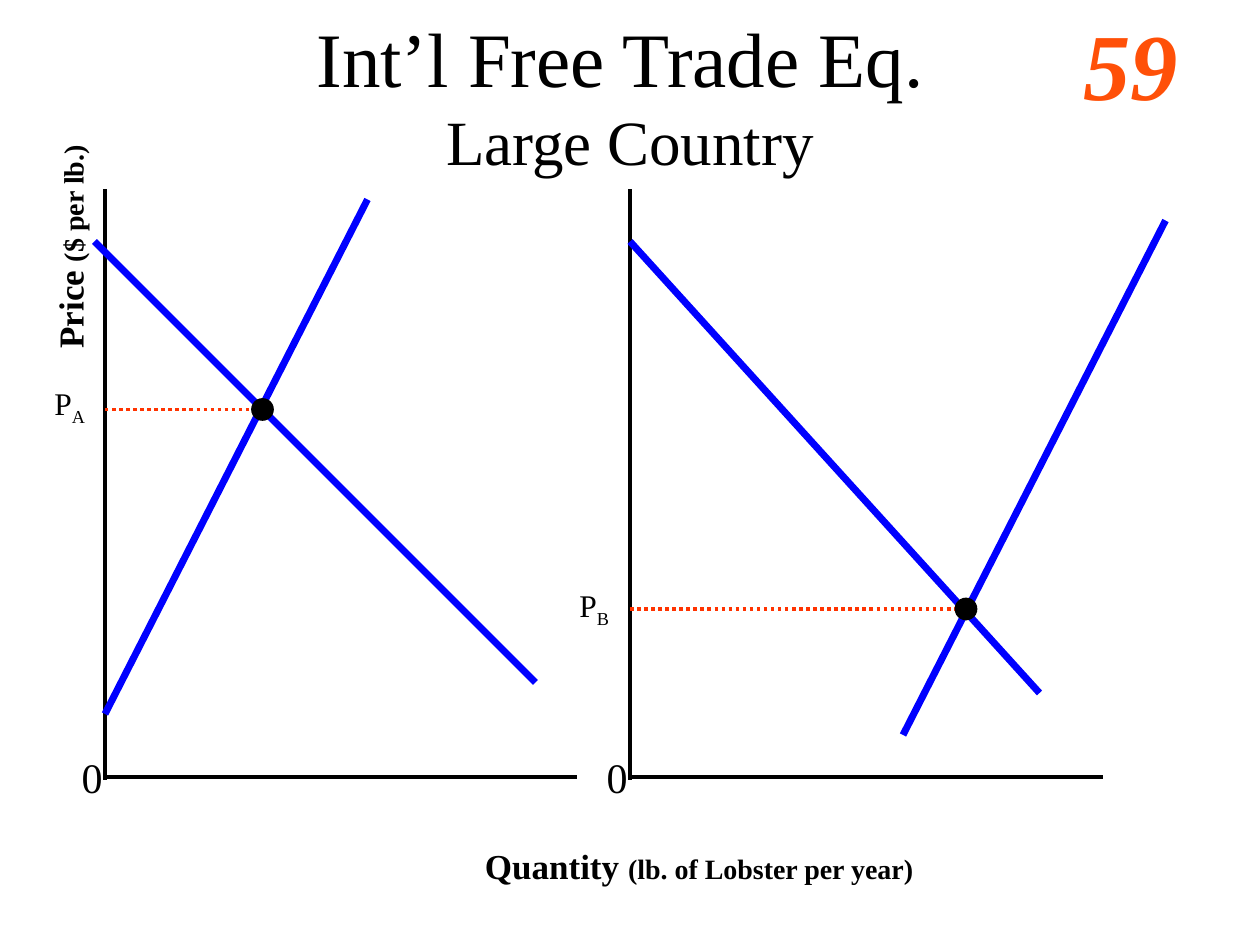
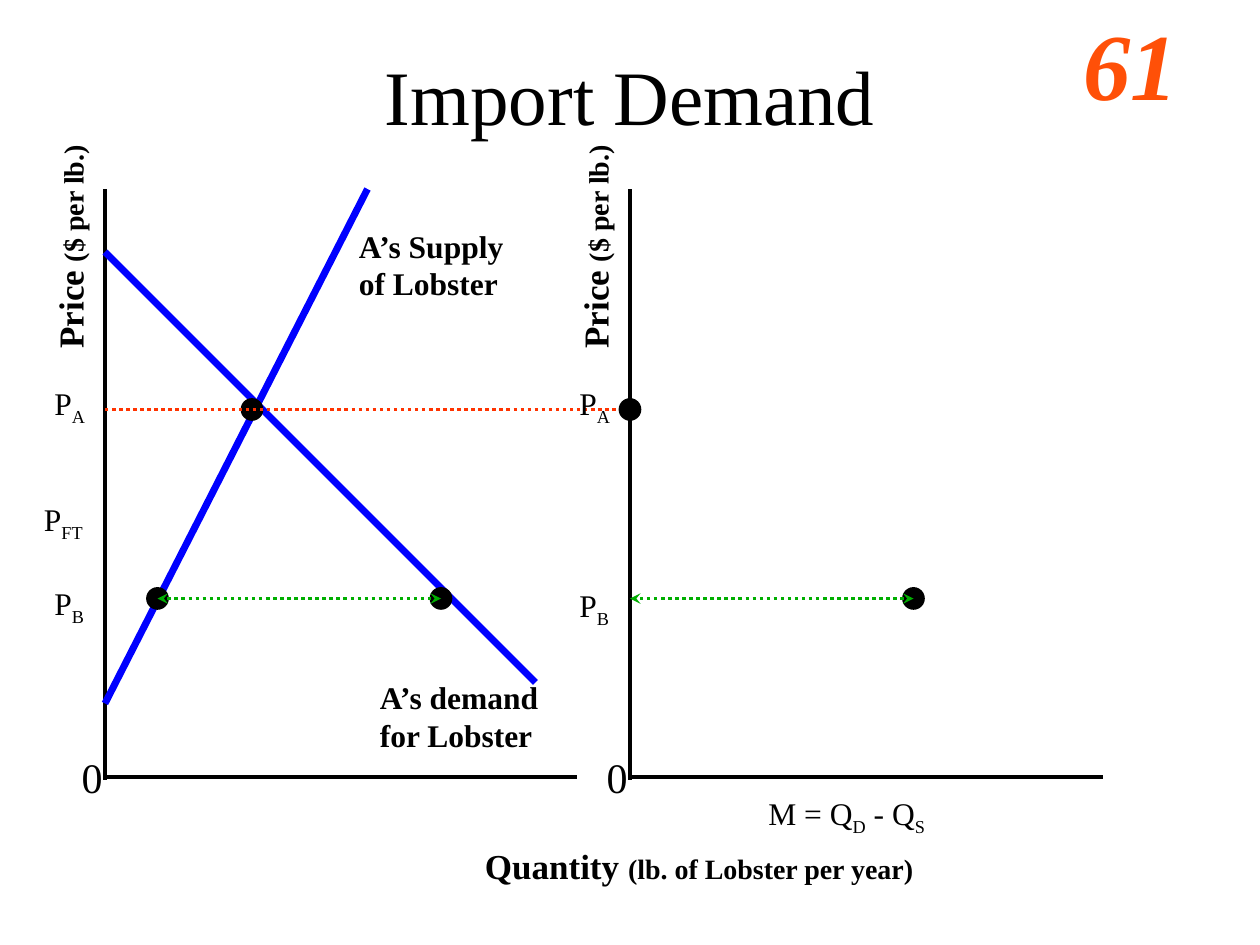
"""Build two lobster-trade slides on a grid of 120 columns and 90 rows."""
from dataclasses import dataclass
from typing import NamedTuple, Union

from lxml import etree
from pptx import Presentation
from pptx import util as u
from pptx.dml.color import RGBColor
from pptx.enum import dml, shapes, text
from pptx.oxml import ns

WIDTH, HEIGHT = u.Inches(10), u.Inches(7.5)
COLUMNS, ROWS = 120, 90
FONT = "Times New Roman"
COLOURS = {"ink": "000000", "curve": "0000FF", "price": "FF3300",
           "trade": "00AE00", "number": "FF5008"}
FORMATS = {
    "title": dict(size=u.Pt(44)),
    "subtitle": dict(size=u.Pt(36)),
    "number": dict(size=u.Pt(54), bold=True, italic=True),
    "axis": dict(size=u.Pt(20), bold=True),
    "unit": dict(size=u.Pt(16), bold=True),
    "zero": dict(size=u.Pt(24)),
    "curve": dict(size=u.Pt(18), bold=True),
    "symbol": dict(size=u.Pt(18)),
    "subscript": dict(size=u.Pt(18)),
}
FRAME = dict(margin_left=u.Inches(0.1), margin_right=u.Inches(0.1),
             margin_top=u.Inches(0.05), margin_bottom=u.Inches(0.05))
PANELS = LEFT, RIGHT = 10, 60
TOP, BASE, AXIS_LENGTH = 18, 74, 45
DOT = 2


class Run(NamedTuple):
    """Words in one format."""
    words: str
    style: str


class Box(NamedTuple):
    """A place on the grid."""
    column: float
    row: float
    columns: float
    rows: float


@dataclass(frozen=True)
class Label:
    """Paragraphs of runs in a box."""
    box: Box
    paragraphs: tuple[tuple[Run, ...], ...]
    wrap: bool = True
    turn: int = 0
    colour: str = "ink"


@dataclass(frozen=True)
class Line:
    """A straight line between two grid points."""
    start: tuple[float, float]
    end: tuple[float, float]
    colour: str = "curve"
    weight: float = 4
    dotted: bool = False
    arrows: bool = False


@dataclass(frozen=True)
class Dot:
    """A round mark centred on a grid point."""
    column: float
    row: float


Mark = Union[Label, Line, Dot]


@dataclass(frozen=True)
class Page:
    """The content of one slide."""
    number: str
    title: tuple[Run, ...]
    price_axes: tuple[int, ...]
    marks: tuple[Mark, ...]


def across(columns: float) -> int:
    """Turn columns into a length."""
    return round(WIDTH * columns / COLUMNS)


def down(rows: float) -> int:
    """Turn rows into a length."""
    return round(HEIGHT * rows / ROWS)


def place(box: Box) -> tuple[int, int, int, int]:
    """Turn a grid box into left, top, width and height."""
    return across(box.column), down(box.row), across(box.columns), down(box.rows)


def colour_of(name: str) -> RGBColor:
    """Look up a colour."""
    return RGBColor.from_string(COLOURS[name])


def assign(target, values: dict) -> None:
    """Set each named value on the target."""
    for name, value in values.items():
        setattr(target, name, value)


def write(paragraph, piece: Run, colour: str = "ink") -> None:
    """Add one formatted run to a paragraph."""
    run = paragraph.add_run()
    run.text = piece.words
    assign(run.font, dict(FORMATS[piece.style], name=FONT))
    run.font.color.rgb = colour_of(colour)
    if piece.style == "subscript":
        run._r.get_or_add_rPr().set("baseline", "-25000")


def draw_label(slide, label: Label) -> None:
    """Draw a text box."""
    area = slide.shapes.add_textbox(*place(label.box))
    area.rotation = label.turn
    frame = area.text_frame
    assign(frame, dict(FRAME, word_wrap=label.wrap,
                       auto_size=text.MSO_AUTO_SIZE.SHAPE_TO_FIT_TEXT))
    for index, pieces in enumerate(label.paragraphs):
        paragraph = frame.add_paragraph() if index else frame.paragraphs[0]
        for piece in pieces:
            write(paragraph, piece, label.colour)


def draw_line(parent, line: Line) -> None:
    """Draw a line on a slide or in a group."""
    (x1, y1), (x2, y2) = line.start, line.end
    stroke = parent.shapes.add_connector(
        shapes.MSO_CONNECTOR.STRAIGHT, across(x1), down(y1), across(x2), down(y2))
    stroke.line.color.rgb = colour_of(line.colour)
    stroke.line.width = u.Pt(line.weight)
    if line.dotted:
        stroke.line.dash_style = dml.MSO_LINE.ROUND_DOT
    if line.arrows:
        for end in ("a:headEnd", "a:tailEnd"):
            etree.SubElement(stroke.line._get_or_add_ln(), ns.qn(end), type="stealth")
    etree.SubElement(stroke._element.spPr, ns.qn("a:effectLst"))


def draw_dot(slide, dot: Dot) -> None:
    """Draw a filled round mark."""
    box = Box(dot.column - DOT / 2, dot.row - DOT / 2, DOT, DOT)
    point = slide.shapes.add_shape(shapes.MSO_SHAPE.OVAL, *place(box))
    point.shadow.inherit = False
    point.fill.solid()
    point.fill.fore_color.rgb = point.line.color.rgb = colour_of("ink")
    point.line.width = u.Pt(1)


DRAWERS = {Label: draw_label, Line: draw_line, Dot: draw_dot}


def guide(start: float, end: float, row: float) -> Line:
    """Describe a dotted price level."""
    return Line((start, row), (end, row), "price", 2, dotted=True)


def trade(start: float, end: float, row: float) -> Line:
    """Describe a dotted trade volume with arrows at both ends."""
    return Line((start, row), (end, row), "trade", 2, dotted=True, arrows=True)


def price(panel: int, row: float, country: str) -> Label:
    """Describe a price symbol left of a panel."""
    return Label(Box(panel - 6, row, 6, 4.8),
                 ((Run("P", "symbol"), Run(country, "subscript")),))


def price_axis(panel: int) -> Label:
    """Describe the upright name of a price axis."""
    return Label(Box(panel - 14.3, 20.88, 21.84, 5.16),
                 ((Run("Price ", "axis"), Run("($ per lb.)", "unit")),),
                 wrap=False, turn=270)


QUANTITY = Label(Box(45, 79.8, 43.32, 5.16),
                 ((Run("Quantity ", "axis"),
                   Run("(lb. of Lobster per year)", "unit")),), wrap=False)

PAGES = (
    Page("59",
         (Run("Int’l Free Trade Eq. ", "title"), Run("Large Country", "subtitle")),
         (LEFT,),
         (Line((86, 70), (111, 21)),
          Line((RIGHT, 23), (99, 66)),
          Line((LEFT, 68), (35, 19)),
          Line((9, 23), (51, 65)),
          guide(LEFT, 24, 39), Dot(25, 39), price(LEFT, 36, "A"),
          guide(RIGHT, 91, 58), Dot(92, 58), price(RIGHT, 55.2, "B"))),
    Page("61",
         (Run("Import Demand", "title"),),
         PANELS,
         (Line((LEFT, 67), (35, 18)),
          Line((LEFT, 24), (51, 65)),
          Dot(24, 39), guide(LEFT, RIGHT, 39), Dot(RIGHT, 39),
          Dot(15, 57), Dot(42, 57), trade(15, 42, 57),
          Dot(87, 57), trade(RIGHT, 87, 57),
          price(LEFT, 36, "A"), price(RIGHT, 36, "A"),
          price(LEFT, 55, "B"), price(RIGHT, 55.2, "B"),
          Label(Box(3, 47, 8, 4.8), ((Run("P", "symbol"), Run("FT", "subscript")),)),
          Label(Box(33, 21, 16.56, 8.4),
                ((Run("A’s Supply", "curve"),), (Run("of Lobster", "curve"),)),
                wrap=False),
          Label(Box(35, 64, 18, 8.4), ((Run("A’s demand for Lobster", "curve"),),)),
          Label(Box(72, 75, 21, 4.8),
                ((Run("M = Q", "symbol"), Run("D", "subscript"),
                  Run(" - Q", "symbol"), Run("S", "subscript")),)))),
)


def draw_title(slide, pieces: tuple[Run, ...]) -> None:
    """Place and fill the title, one line for each piece."""
    heading = slide.shapes.title
    assign(heading, dict(zip(("left", "top", "width", "height"),
                             place(Box(9, 0, 102, 18)))))
    frame = heading.text_frame
    assign(frame, dict(FRAME, word_wrap=True, auto_size=text.MSO_AUTO_SIZE.NONE,
                       vertical_anchor=text.MSO_ANCHOR.MIDDLE))
    paragraph = frame.paragraphs[0]
    paragraph.alignment = text.PP_ALIGN.CENTER
    for index, piece in enumerate(pieces):
        if index:
            paragraph.add_line_break()
        write(paragraph, piece)


def draw_axes(slide, panel: int) -> None:
    """Draw the two axes of a panel and its origin."""
    axes = slide.shapes.add_group_shape()
    draw_line(axes, Line((panel, TOP), (panel, BASE + 0.25), "ink", 2))
    draw_line(axes, Line((panel, BASE), (panel + AXIS_LENGTH, BASE), "ink", 2))
    draw_label(slide, Label(Box(panel - 3.4, 71, 4.44, 6),
                            ((Run("0", "zero"),),), wrap=False))


def draw_page(deck, page: Page) -> None:
    """Add one slide to the deck."""
    slide = deck.slides.add_slide(deck.slide_layouts.get_by_name("Title Only"))
    draw_title(slide, page.title)
    draw_label(slide, Label(Box(102, 0, 17, 12),
                            ((Run(page.number, "number"),),), colour="number"))
    for panel in PANELS:
        draw_axes(slide, panel)
    for mark in (*map(price_axis, page.price_axes), QUANTITY, *page.marks):
        DRAWERS[type(mark)](slide, mark)


def main() -> None:
    """Build and save the deck."""
    deck = Presentation()
    deck.slide_width, deck.slide_height = WIDTH, HEIGHT
    for page in PAGES:
        draw_page(deck, page)
    deck.save("out.pptx")


if __name__ == "__main__":
    main()
